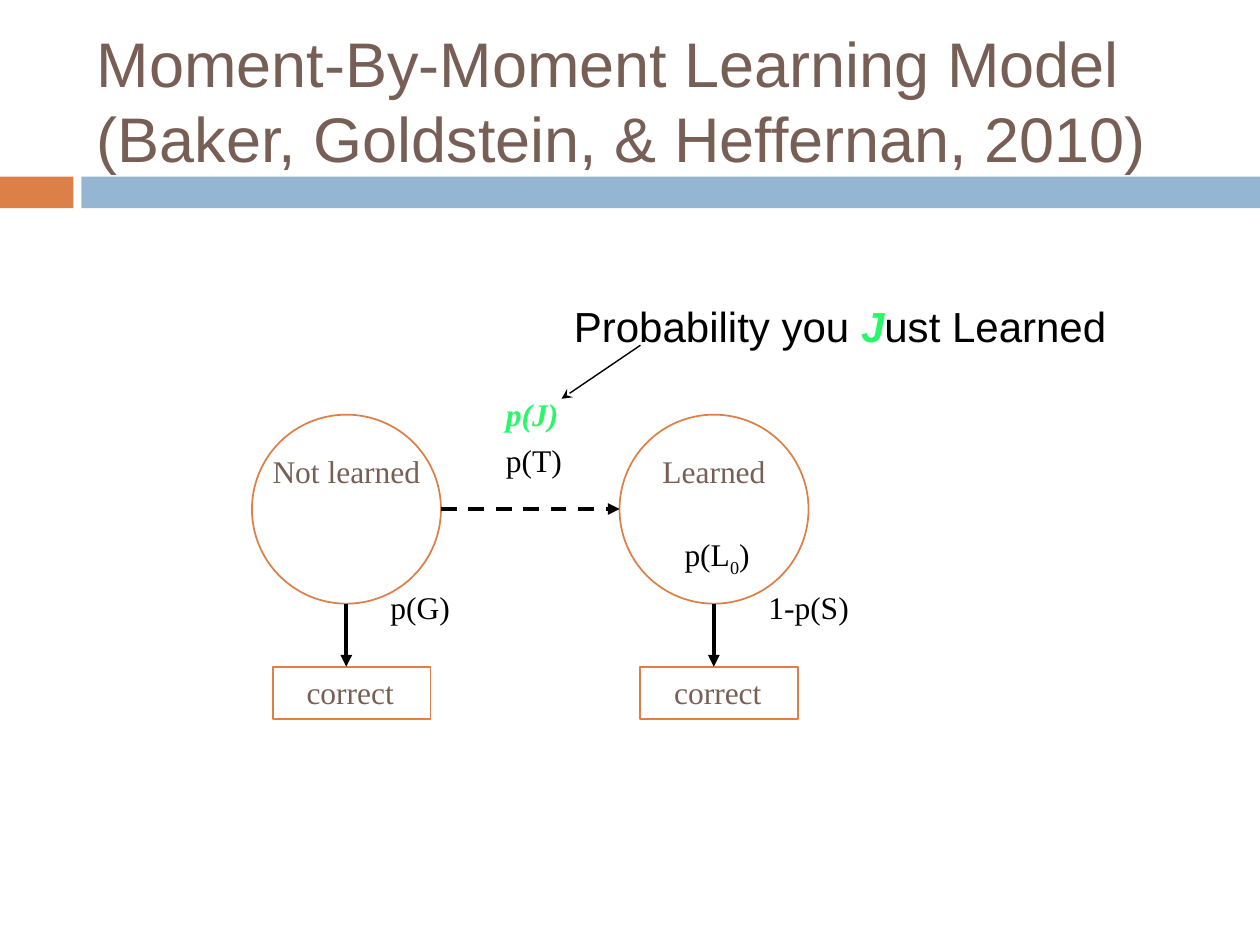
"""Build the slide on the moment-by-moment learning model."""
import pptx
import pptx.dml.color
import pptx.enum.dml
import pptx.enum.shapes
import pptx.enum.text
import pptx.oxml.ns
import lxml.etree

Cm = pptx.util.Cm
Pt = pptx.util.Pt
Kind = pptx.enum.shapes.MSO_SHAPE
Align = pptx.enum.text.PP_ALIGN
COLORS = {"brown": "775F55", "orange": "DD8047", "blue": "94B6D2",
          "green": "28F868", "black": "000000"}
SERIF = "Times New Roman"
SANS = "Arial"


def color(name):
    return pptx.dml.color.RGBColor.from_string(COLORS[name])


def style(run, font, size, hue):
    run.font.name = font
    run.font.size = Pt(size)
    run.font.color.rgb = color(hue)


def accent(run):
    run.font.bold = run.font.italic = True
    run.font.color.rgb = color("green")


def add_title(slide, text):
    title = slide.shapes.title
    title.left, title.top = Cm(1.7), Cm(0.64)
    title.width, title.height = Cm(22.66), Cm(2.74)
    frame = title.text_frame
    frame.text = text
    frame.auto_size = pptx.enum.text.MSO_AUTO_SIZE.NONE
    frame.vertical_anchor = pptx.enum.text.MSO_ANCHOR.MIDDLE
    for para in frame.paragraphs:
        para.alignment = Align.LEFT
        for run in para.runs:
            style(run, SANS, 36, "brown")


def add_shape(slide, kind, box, fill=None, line=None):
    shape = slide.shapes.add_shape(kind, *map(Cm, box))
    shape.shadow.inherit = False
    if fill:
        shape.fill.solid()
        shape.fill.fore_color.rgb = color(fill)
    else:
        shape.fill.background()
    if line:
        shape.line.color.rgb = color(line)
        shape.line.width = Pt(1)
    else:
        shape.line.fill.background()


def add_label(slide, parts, box, hue="black", font=SERIF, size=18, align=Align.LEFT):
    frame = slide.shapes.add_textbox(*map(Cm, box)).text_frame
    frame.word_wrap = True
    para = frame.paragraphs[0]
    para.alignment = align
    for part in parts:
        run = para.add_run()
        run.text = part
        style(run, font, size, hue)
    return para.runs


def add_arrow(slide, start, end, width=2.25, head="triangle", dash=False):
    link = slide.shapes.add_connector(
        pptx.enum.shapes.MSO_CONNECTOR.STRAIGHT, *map(Cm, start + end))
    link.line.color.rgb = color("black")
    link.line.width = Pt(width)
    if dash:
        link.line.dash_style = pptx.enum.dml.MSO_LINE.DASH
    qn = pptx.oxml.ns.qn
    props = link.line._get_or_add_ln()
    lxml.etree.SubElement(props, qn("a:tailEnd"), type=head)
    lxml.etree.SubElement(link._element.spPr, qn("a:effectLst"))


def add_state(slide, left, name, chance, width):
    """Draw a state circle with the arrow down to its answer box."""
    mid = left + 1.9
    add_shape(slide, Kind.OVAL, (left, 8.36, 3.81, 3.81), line="orange")
    add_label(slide, [name], (left - 0.42, 8.99, 4.65, 1.02), "brown",
              align=Align.CENTER)
    add_shape(slide, Kind.RECTANGLE, (left + 0.42, 13.44, 3.18, 1.06), line="orange")
    add_label(slide, ["correct"], (left + 0.85, 13.44, 2.96, 1.02), "brown")
    add_arrow(slide, (mid, 12.17), (mid, 13.44))
    add_label(slide, [chance], (left + 2.54 + (0.21 if width > 2 else 0),
                                11.73, width, 1.02))


def main():
    deck = pptx.Presentation()
    deck.slide_width, deck.slide_height = Cm(25.4), Cm(19.05)
    slide = deck.slides.add_slide(deck.slide_layouts[5])

    add_shape(slide, Kind.RECTANGLE, (0, 3.56, 1.48, 0.64), fill="orange")
    add_shape(slide, Kind.RECTANGLE, (1.64, 3.56, 23.76, 0.64), fill="blue")
    add_title(slide, "Moment-By-Moment Learning Model\v"
                     "(Baker, Goldstein, & Heffernan, 2010)")

    add_state(slide, 5.08, "Not learned", "p(G)", 1.9)
    add_state(slide, 12.49, "Learned", "1-p(S)", 2.96)
    add_arrow(slide, (8.89, 10.26), (12.49, 10.26), dash=True)

    add_label(slide, ["p(T)"], (9.95, 8.76, 1.7, 1.02))
    start = add_label(slide, ["p(L", "0", ")"], (13.55, 10.67, 2.54, 1.02))
    start[1].font._element.set("baseline", "-25000")
    just = add_label(slide, ["p(J)"], (9.95, 7.83, 1.7, 1.02))
    accent(just[0])
    note = add_label(slide, ["Probability you ", "J", "ust Learned"],
                     (11.32, 5.93, 11.54, 1.28), font=SANS, size=24)
    accent(note[1])
    add_arrow(slide, (12.91, 6.96), (11.32, 8.04), width=0.79, head="stealth")

    deck.save("out.pptx")


if __name__ == "__main__":
    main()
